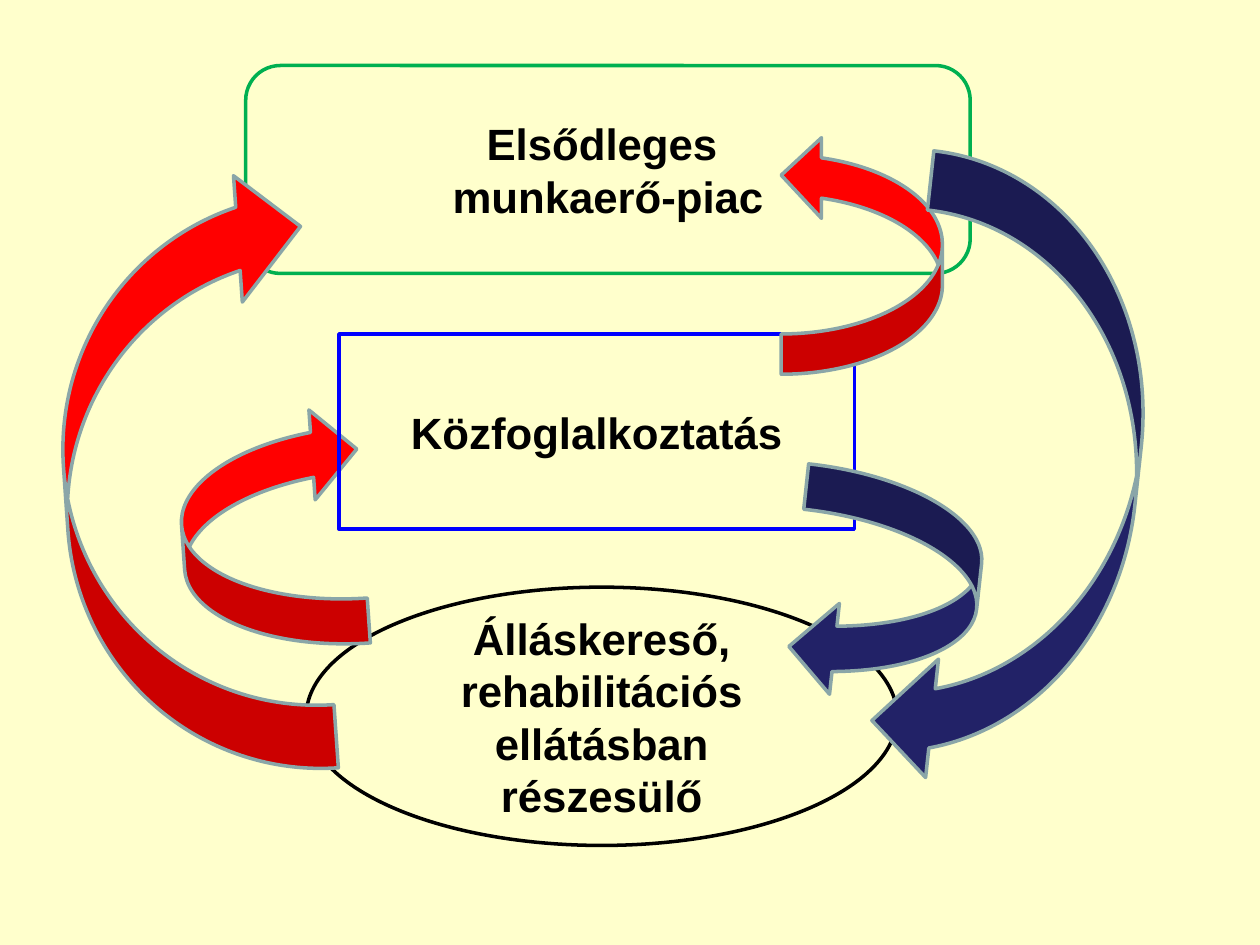
"""Build a slide on the flows between job seekers, public work and the labour market."""
from dataclasses import dataclass

from pptx import Presentation
from pptx.dml.color import RGBColor
from pptx.enum.shapes import MSO_SHAPE
from pptx.enum.text import MSO_ANCHOR, PP_ALIGN
from pptx.util import Inches, Pt


@dataclass(frozen=True)
class Theme:
    background: str = "FFFFCC"
    text: str = "000000"
    market: str = "00B050"
    public_work: str = "0000FF"
    seekers: str = "000000"
    up: str = "FF0000"
    down: str = "222267"
    arrow_line: str = "8AA6A8"
    font: str = "Arial"
    size: int = 25
    line_width: int = 2


def write_text(tf, text, *, font, size, color, bold=True, align=PP_ALIGN.CENTER):
    tf.word_wrap = True
    tf.vertical_anchor = MSO_ANCHOR.MIDDLE
    for i, line in enumerate(text.split("\n")):
        p = tf.add_paragraph() if i else tf.paragraphs[0]
        p.alignment = align
        r = p.add_run()
        r.text = line
        r.font.name = font
        r.font.size = Pt(size)
        r.font.bold = bold
        r.font.color.rgb = RGBColor.from_string(color)


class FlowSlide:
    def __init__(self, prs, theme):
        self.theme = theme
        self.s = prs.slides.add_slide(prs.slide_layouts[6])
        fill = self.s.background.fill
        fill.solid()
        fill.fore_color.rgb = RGBColor.from_string(theme.background)

    def shape(self, kind, box, line, fill=None):
        sp = self.s.shapes.add_shape(kind, *map(Inches, box))
        sp.shadow.inherit = False
        if fill:
            sp.fill.solid()
            sp.fill.fore_color.rgb = RGBColor.from_string(fill)
        else:
            sp.fill.background()
        sp.line.color.rgb = RGBColor.from_string(line)
        sp.line.width = Pt(self.theme.line_width)
        return sp

    def stage(self, kind, box, text, line, fill=None):
        sp = self.shape(kind, box, line, fill)
        t = self.theme
        write_text(sp.text_frame, text, font=t.font, size=t.size, color=t.text)

    def arrow(self, box, fill, rotation, flip=None):
        sp = self.shape(MSO_SHAPE.CURVED_UP_ARROW, box, self.theme.arrow_line, fill)
        sp.rotation = rotation
        if flip:
            sp.element.spPr.xfrm.set(flip, "1")

    def arrow_up_left(self, box):
        self.arrow(box, self.theme.up, 266, "flipV")

    def arrow_up_right(self, box):
        self.arrow(box, self.theme.up, 270)

    def arrow_down(self, box):
        self.arrow(box, self.theme.down, 276.2, "flipH")


def main():
    prs = Presentation()
    prs.slide_width, prs.slide_height = Inches(10), Inches(7.5)
    theme = Theme()
    flow = FlowSlide(prs, theme)
    flow.stage(MSO_SHAPE.OVAL, (2.43, 4.66, 4.69, 2.05),
               "Álláskereső, rehabilitációs ellátásban részesülő",
               theme.seekers, theme.background)
    flow.arrow_up_left((1.21, 3.49, 1.9, 1.43))
    flow.stage(MSO_SHAPE.RECTANGLE, (2.69, 2.65, 4.09, 1.55),
               "Közfoglalkoztatás", theme.public_work)
    flow.arrow_down((6.13, 3.94, 1.82, 1.45))
    flow.stage(MSO_SHAPE.ROUNDED_RECTANGLE, (1.95, 0.52, 5.75, 1.65),
               "Elsődleges \nmunkaerő-piac", theme.market)
    flow.arrow_up_right((5.89, 1.38, 1.9, 1.28))
    flow.arrow_down((5.57, 2.85, 5.02, 1.89))
    flow.arrow_up_left((-0.89, 2.76, 4.81, 2.01))
    prs.save("out.pptx")


if __name__ == "__main__":
    main()
